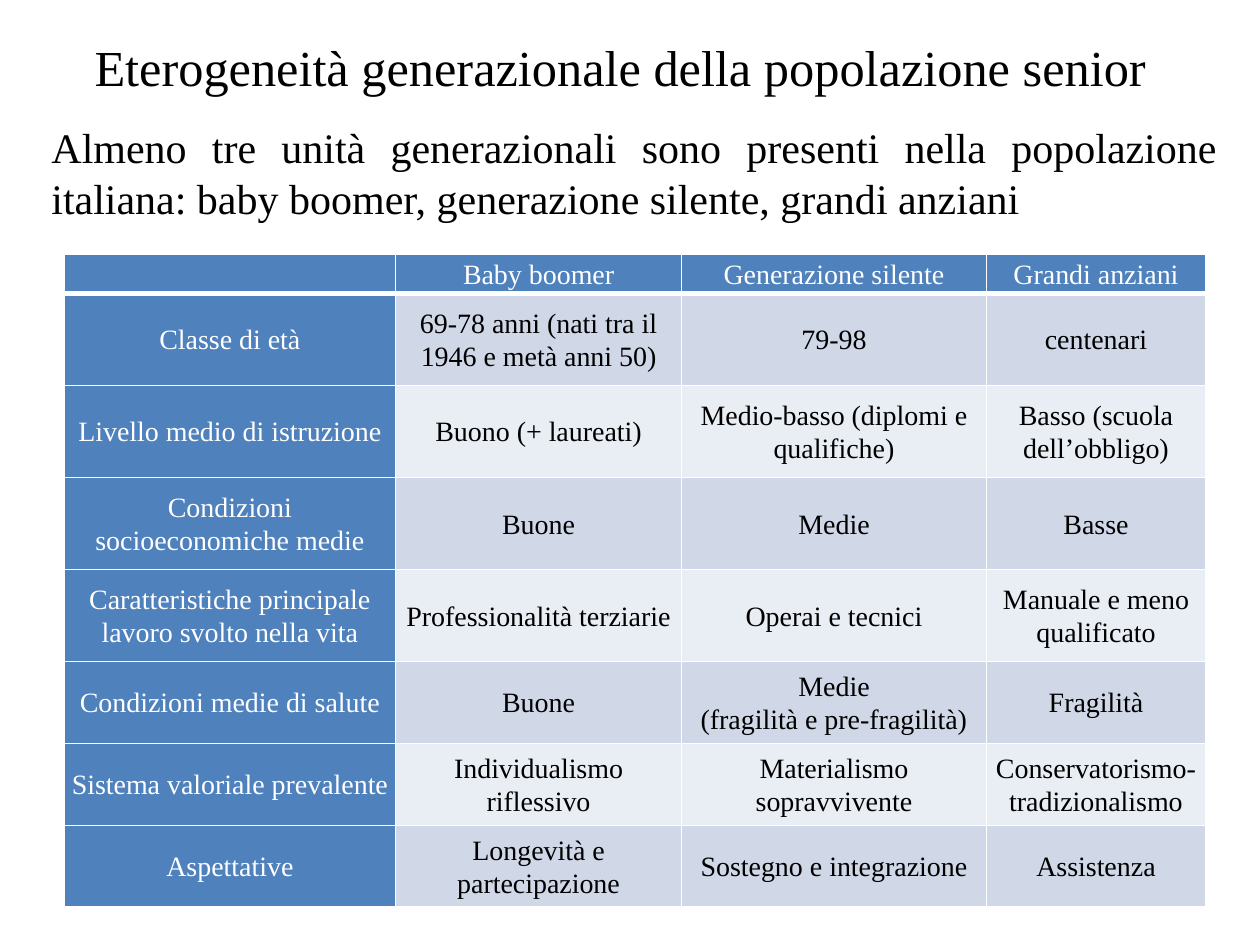
from dataclasses import dataclass

import lxml.etree
import pptx
import pptx.dml.color
import pptx.enum.text
import pptx.oxml.ns
import pptx.util

Pt = pptx.util.Pt
Align = pptx.enum.text.PP_ALIGN
Anchor = pptx.enum.text.MSO_ANCHOR


@dataclass(frozen=True)
class Theme:
    font: str = "Times New Roman"
    title_size: float = 28.8
    body_size: float = 24
    table_size: float = 16
    text: str = "000000"
    white: str = "FFFFFF"
    header_fill: str = "4F81BD"
    band_fills: tuple = ("E9EDF4", "D0D8E8")


TITLE = "Eterogeneità generazionale della popolazione senior"
INTRODUCTION = (
    "Almeno tre unità generazionali sono presenti nella popolazione italiana: "
    "baby boomer, generazione silente, grandi anziani"
)
GENERATIONS = [
    ["", "Baby boomer", "Generazione silente", "Grandi anziani"],
    ["Classe di età", "69-78 anni (nati tra il 1946 e metà anni 50)", "79-98", "centenari"],
    ["Livello medio di istruzione", "Buono (+ laureati)",
     "Medio-basso (diplomi e qualifiche)", "Basso (scuola dell’obbligo)"],
    ["Condizioni socioeconomiche medie", "Buone", "Medie", "Basse"],
    ["Caratteristiche principale lavoro svolto nella vita", "Professionalità terziarie",
     "Operai e tecnici", "Manuale e meno qualificato"],
    ["Condizioni medie di salute", "Buone", "Medie\n(fragilità e pre-fragilità)", "Fragilità"],
    ["Sistema valoriale prevalente", "Individualismo riflessivo",
     "Materialismo sopravvivente", "Conservatorismo-\ntradizionalismo"],
    ["Aspettative", "Longevità e partecipazione", "Sostegno e integrazione", "Assistenza"],
]
COLUMN_WIDTHS = [189.4, 163.4, 174.2, 125.3]
ROW_HEIGHTS = [22.3] + [52.6] * 4 + [46.8] * 3


class SlideBuilder:
    def __init__(self, slide, theme):
        self.slide = slide
        self.theme = theme

    def format_text(self, text_frame, size, color, alignment):
        for paragraph in text_frame.paragraphs:
            paragraph.alignment = alignment
            for run in paragraph.runs:
                run.font.name = self.theme.font
                run.font.size = Pt(size)
                run.font.bold = False
                run.font.color.rgb = pptx.dml.color.RGBColor.from_string(color)

    def add_title(self, text, left, top, width, height):
        title = self.slide.shapes.title
        title.left, title.top, title.width, title.height = map(Pt, (left, top, width, height))
        text_frame = title.text_frame
        text_frame.text = text
        text_frame.auto_size = pptx.enum.text.MSO_AUTO_SIZE.NONE
        text_frame.vertical_anchor = Anchor.MIDDLE
        self.format_text(text_frame, self.theme.title_size, self.theme.text, Align.CENTER)

    def add_body(self, text, left, top, width, height):
        text_box = self.slide.shapes.add_textbox(*map(Pt, (left, top, width, height)))
        text_frame = text_box.text_frame
        text_frame.word_wrap = True
        text_frame.text = text
        text_frame.paragraphs[0].space_before = Pt(0.2 * self.theme.body_size)
        self.format_text(text_frame, self.theme.body_size, self.theme.text, Align.JUSTIFY)

    def set_borders(self, cell, bottom_width):
        properties = cell._tc.get_or_add_tcPr()
        widths = {"lnL": 1, "lnR": 1, "lnT": 1, "lnB": bottom_width}
        for tag, width in widths.items():
            line = lxml.etree.SubElement(properties, pptx.oxml.ns.qn(f"a:{tag}"), w=str(Pt(width)))
            fill = lxml.etree.SubElement(line, pptx.oxml.ns.qn("a:solidFill"))
            lxml.etree.SubElement(fill, pptx.oxml.ns.qn("a:srgbClr"), val=self.theme.white)

    def fill_cell(self, cell, text, fill, color, bottom_width):
        cell.margin_left = cell.margin_right = Pt(4.3)
        cell.margin_top = cell.margin_bottom = 0
        cell.vertical_anchor = Anchor.MIDDLE
        self.set_borders(cell, bottom_width)
        cell.fill.solid()
        cell.fill.fore_color.rgb = pptx.dml.color.RGBColor.from_string(fill)
        if text:
            cell.text_frame.text = text
            self.format_text(cell.text_frame, self.theme.table_size, color, Align.CENTER)
            for paragraph in cell.text_frame.paragraphs:
                paragraph.line_spacing = 1.07

    def add_table(self, rows, left, top, column_widths, row_heights):
        """Add a table whose first row and first column are headers."""
        frame = self.slide.shapes.add_table(
            len(rows), len(column_widths), Pt(left), Pt(top),
            Pt(sum(column_widths)), Pt(sum(row_heights)),
        )
        table = frame.table
        table.first_col = True
        for column, width in zip(table.columns, column_widths):
            column.width = Pt(width)
        for row, height in zip(table.rows, row_heights):
            row.height = Pt(height)
        for row_index, texts in enumerate(rows):
            for column_index, text in enumerate(texts):
                if row_index == 0 or column_index == 0:
                    fill, color = self.theme.header_fill, self.theme.white
                else:
                    fill, color = self.theme.band_fills[row_index % 2], self.theme.text
                bottom_width = 3 if row_index == 0 else 1
                self.fill_cell(table.cell(row_index, column_index), text, fill, color, bottom_width)


def main():
    presentation = pptx.Presentation()
    presentation.slide_width, presentation.slide_height = Pt(720), Pt(540)
    slide = presentation.slides.add_slide(presentation.slide_layouts[5])
    builder = SlideBuilder(slide, Theme())
    builder.add_title(TITLE, 20.2, 9.4, 668.9, 56.9)
    builder.add_body(INTRODUCTION, 22.3, 66.2, 680.4, 79.2)
    builder.add_table(GENERATIONS, 36.7, 145.4, COLUMN_WIDTHS, ROW_HEIGHTS)
    presentation.save("out.pptx")


if __name__ == "__main__":
    main()
